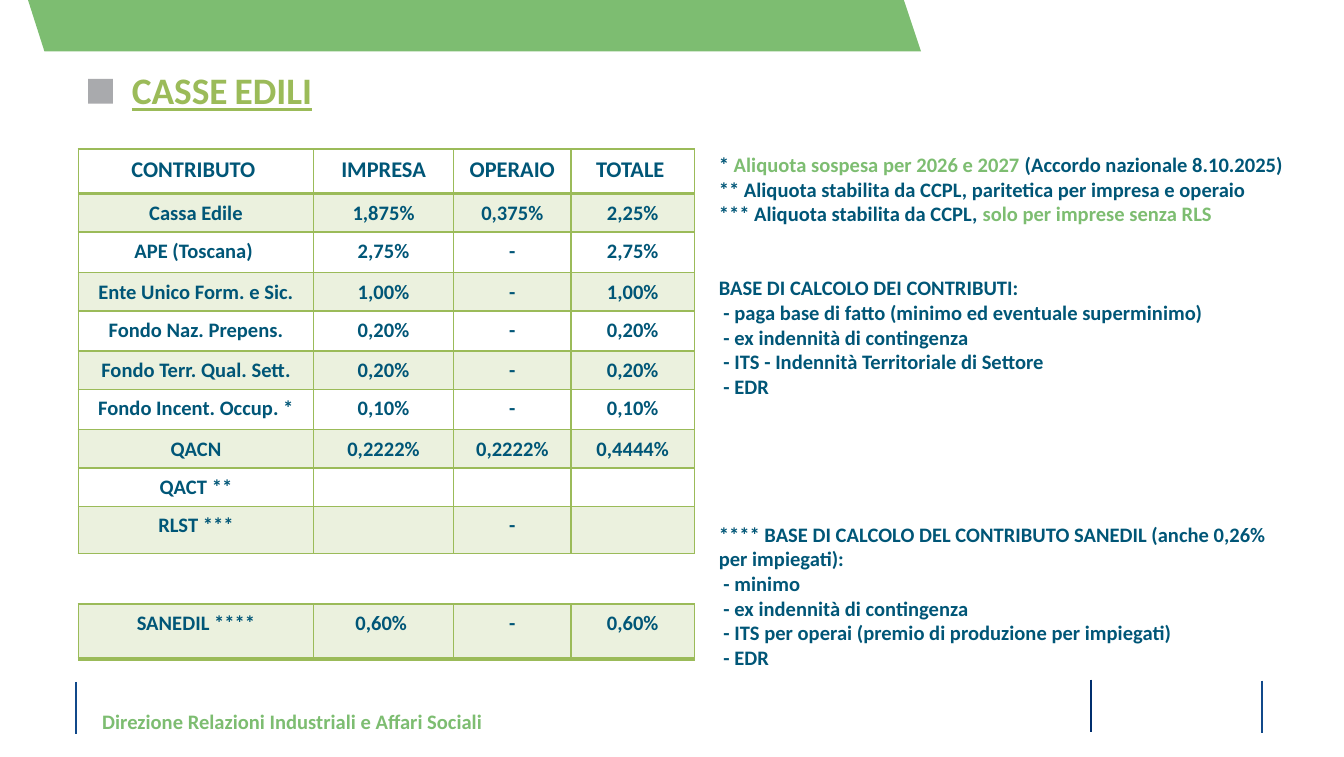
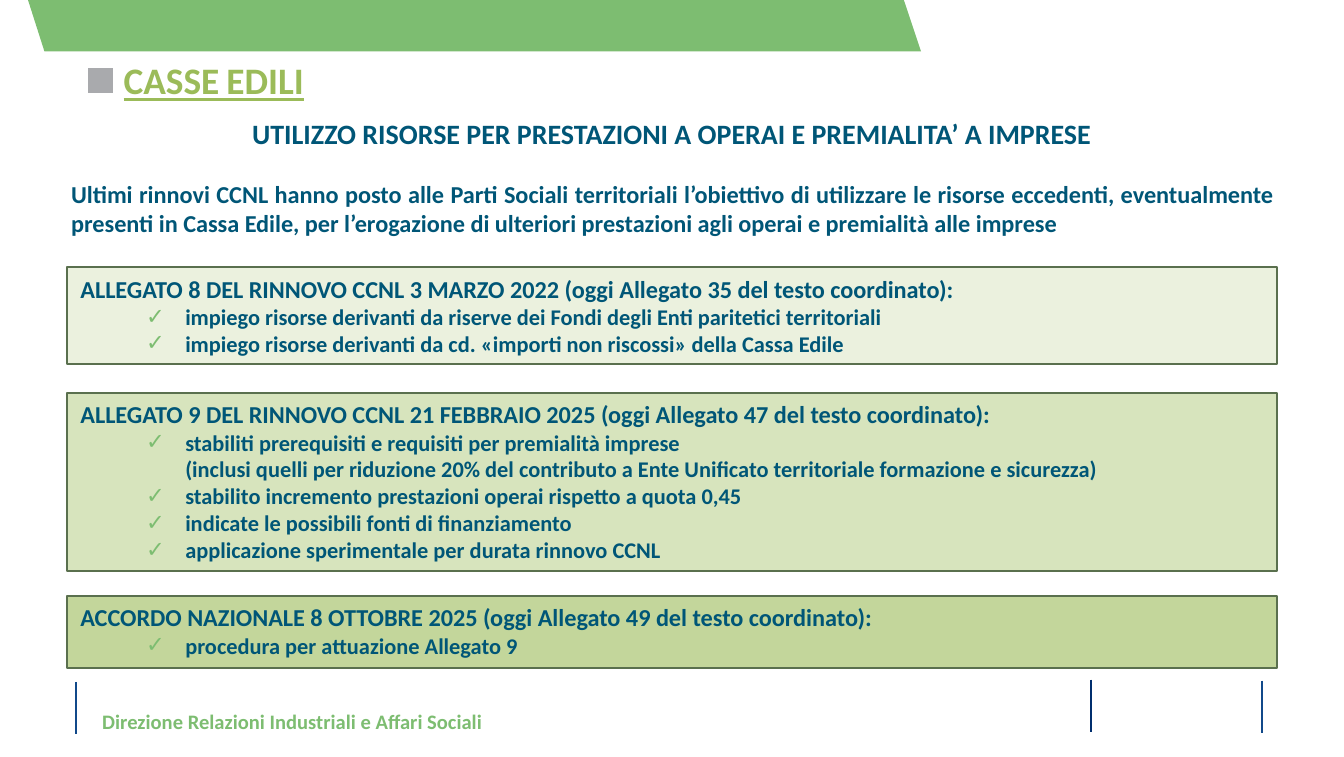
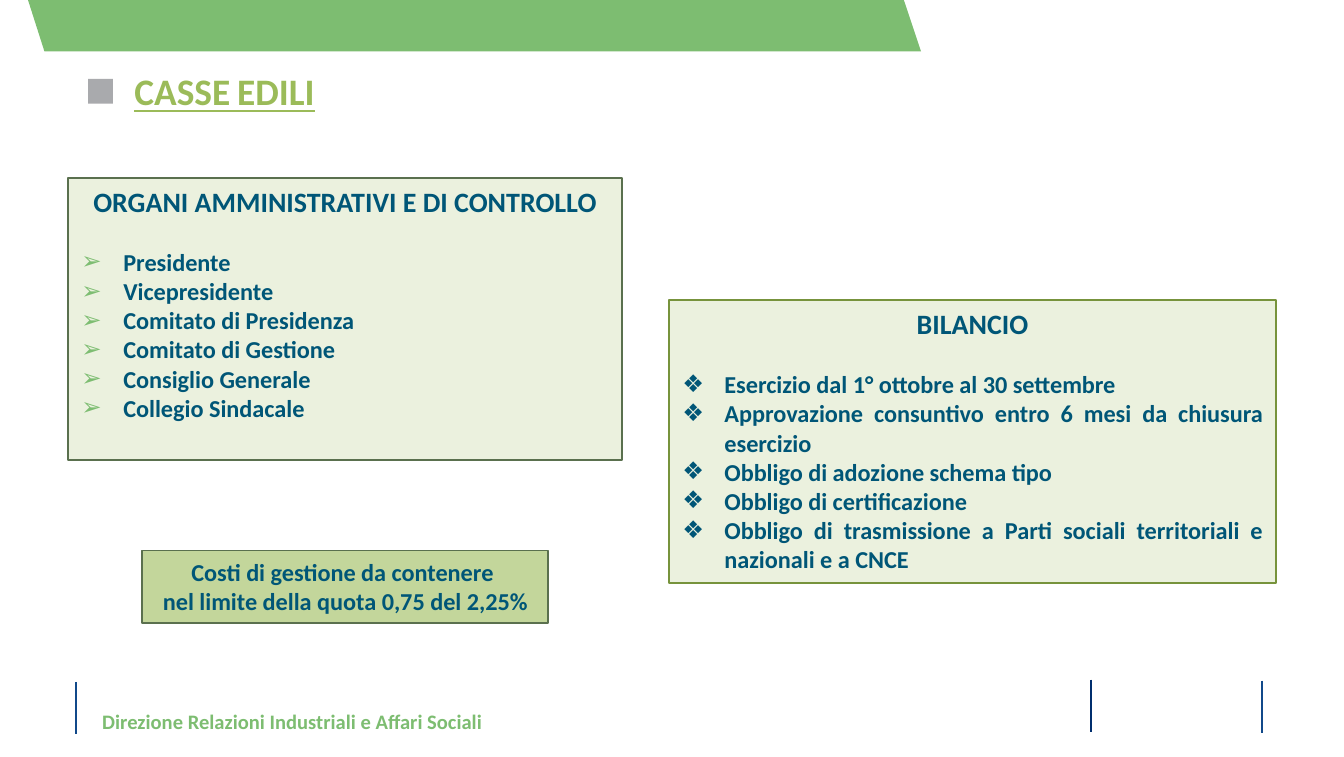
from dataclasses import dataclass
from functools import partial

from lxml import etree
from pptx import Presentation
from pptx.dml.color import RGBColor
from pptx.enum import shapes, text
from pptx.oxml import ns
from pptx.util import Pt

FONT = "Calibri"
GREEN = RGBColor(0x7D, 0xBD, 0x71)
OLIVE = RGBColor(0x9B, 0xBB, 0x59)
MOSS = RGBColor(0x77, 0x93, 0x3C)
EDGE = RGBColor(0x5A, 0x70, 0x4E)
PALE = RGBColor(0xEB, 0xF1, 0xDE)
LIGHT = RGBColor(0xD7, 0xE4, 0xBD)
MID = RGBColor(0xC3, 0xD6, 0x9B)
TEAL = RGBColor(0x00, 0x56, 0x77)
GREY = RGBColor(0xA9, 0xAA, 0xAD)
BLUE = RGBColor(0x11, 0x49, 0x8A)
NAVY = RGBColor(0x00, 0x2E, 0x6E)

LEFT = text.PP_ALIGN.LEFT
MIDDLE = text.PP_ALIGN.CENTER
FULL = text.PP_ALIGN.JUSTIFY

COLS = (126, 75, 63, 66)
ROWS = (23.8, 20.6, 21.7, 20.6, 21.4, 20.6, 21.6, 20.6, 20.6, 25.2)
RATES = (
    ("CONTRIBUTO ", "IMPRESA", "OPERAIO", "TOTALE "),
    ("Cassa Edile", "1,875%", "0,375%", "2,25%"),
    ("APE (Toscana) ", "2,75%", "-", "2,75%"),
    ("Ente Unico Form. e Sic.", "1,00%", "-", "1,00%"),
    ("Fondo Naz. Prepens.", "0,20%", "-", "0,20%"),
    ("Fondo Terr. Qual. Sett.", "0,20%", "-", "0,20%"),
    ("Fondo Incent. Occup. *", "0,10%", "-", "0,10%"),
    ("QACN", "0,2222%", "0,2222%", "0,4444%"),
    ("QACT **", "", "", ""),
    ("RLST ***", "", "-", ""),
)


@dataclass
class Line:
    """A paragraph: plain words, or (words, colour) parts, and its layout."""
    words: object
    size: float = 13
    color: RGBColor = TEAL
    align: int = FULL
    gap: float = 0
    left: float = 0
    hang: float = 0
    mark: str = ""
    tint: RGBColor = TEAL
    title: bool = False


Note = partial(Line, size=11, align=LEFT)
Dash = partial(Note, left=2.5)
Head = partial(Line, size=15, align=MIDDLE)
Plain = partial(Line, size=12, left=56.2)
Check = partial(Plain, hang=21, mark="✓", tint=GREEN)
Arrow = partial(Line, left=22.5, hang=22.5, mark="➢", tint=GREEN)
Gem = partial(Line, left=22.5, hang=22.5, mark="❖")


def paint(el, color):
    """Add a solid fill of the given colour to an XML element."""
    fill = etree.SubElement(el, ns.qn("a:solidFill"))
    etree.SubElement(fill, ns.qn("a:srgbClr"), val=str(color))


def style(para, line):
    """Put one line's words and layout into a paragraph."""
    para.alignment = line.align
    para.space_before = Pt(line.gap)
    props = para._p.get_or_add_pPr()
    props.set("marL", str(Pt(line.left)))
    props.set("indent", str(-Pt(line.hang)))
    if line.mark:
        tint = etree.SubElement(props, ns.qn("a:buClr"))
        etree.SubElement(tint, ns.qn("a:srgbClr"), val=str(line.tint))
        etree.SubElement(props, ns.qn("a:buFont"), typeface=FONT)
        etree.SubElement(props, ns.qn("a:buChar"), char=line.mark)
    font = para.font
    font.name, font.size, font.bold = FONT, Pt(line.size), True
    font.color.rgb = line.color
    if line.title:
        font.underline = True
        props.find(ns.qn("a:defRPr")).set("cap", "small")
    if isinstance(line.words, str):
        if line.words:
            para.add_run().text = line.words
        else:
            etree.SubElement(para._p, ns.qn("a:endParaRPr"), sz=str(int(line.size * 100)))
        return
    for words, color in line.words:
        run = para.add_run()
        run.text = words
        run.font.color.rgb = color


def write(frame, lines):
    """Fill a text frame with lines from the top."""
    frame.word_wrap = True
    frame.vertical_anchor = text.MSO_ANCHOR.TOP
    for num, line in enumerate(lines):
        style(frame.add_paragraph() if num else frame.paragraphs[0], line)


def label(slide, area, lines, inset=True):
    """Add a text box, with or without inner margins."""
    frame = slide.shapes.add_textbox(*map(Pt, area)).text_frame
    if not inset:
        frame.margin_left = frame.margin_right = 0
        frame.margin_top = frame.margin_bottom = 0
    write(frame, lines)


def panel(slide, area, fill, edge=None, lines=()):
    """Add a filled rectangle with an optional outline and text."""
    shape = slide.shapes.add_shape(shapes.MSO_SHAPE.RECTANGLE, *map(Pt, area))
    shape.shadow.inherit = False
    shape.fill.solid()
    shape.fill.fore_color.rgb = fill
    if edge is None:
        shape.line.fill.background()
    else:
        shape.line.color.rgb = edge
        shape.line.width = Pt(1)
    write(shape.text_frame, lines)


def rule(slide, x, top, color):
    """Add one upright footer line."""
    line = slide.shapes.add_connector(
        shapes.MSO_CONNECTOR.STRAIGHT, Pt(x), Pt(top), Pt(x), Pt(top + 28))
    line.line.color.rgb = color
    line.line.width = Pt(1)
    etree.SubElement(line._element.spPr, ns.qn("a:effectLst"))


def band(slide):
    """Add the slanted band at the top."""
    edge = [(Pt(x), Pt(y)) for x, y in ((15, 0), (23.8, 27.5), (493.4, 27.5), (484.2, 0))]
    pen = slide.shapes.build_freeform(*edge[0])
    pen.add_line_segments(edge[1:], close=True)
    shape = pen.convert_to_shape()
    shape.shadow.inherit = False
    shape.fill.solid()
    shape.fill.fore_color.rgb = GREEN
    shape.line.fill.background()


def border(cell, top, base):
    """Draw the four sides of a cell, with given top and base widths."""
    props = cell._tc.get_or_add_tcPr()
    for side, width in (("L", 1), ("R", 1), ("T", top), ("B", base)):
        line = etree.SubElement(props, ns.qn("a:ln" + side), w=str(Pt(width)))
        paint(line, OLIVE)


def grid(slide, top, rows, highs, shade, big=None):
    """Add a table whose first row has a heavy base line."""
    area = (42, top, sum(COLS), sum(highs))
    table = slide.shapes.add_table(len(rows), len(COLS), *map(Pt, area)).table
    table.first_row = table.horz_banding = False
    for col, width in zip(table.columns, COLS):
        col.width = Pt(width)
    for num, (row, high) in enumerate(zip(rows, highs)):
        table.rows[num].height = Pt(high)
        for cell, words in zip(table.rows[num].cells, row):
            border(cell, 2 if num == 1 else 1, 2 if num == 0 else 1)
            if num % 2 == shade:
                cell.fill.solid()
                cell.fill.fore_color.rgb = PALE
            else:
                cell.fill.background()
            size = 12 if num == big else 11
            write(cell.text_frame, [Line(words, size, align=MIDDLE)])


def start(deck, left, top, mark):
    """Add a slide with band, title, square mark and footer."""
    slide = deck.slides.add_slide(deck.slide_layouts[6])
    rule(slide, 40.7, 365.2, BLUE)
    rule(slide, 676.2, 364.5, BLUE)
    rule(slide, 584.3, 364, NAVY)
    title = Line("CASSE EDILI", 20, OLIVE, LEFT, title=True)
    label(slide, (left, top, 611, 24.5), [title], inset=False)
    panel(slide, (47.2, mark, 13.3, 13.3), GREY)
    band(slide)
    foot = Note("Direzione Relazioni Industriali e Affari Sociali", color=GREEN)
    label(slide, (54.8, 379.8, 318, 14), [foot], inset=False)
    return slide


def rates(deck):
    """Build the slide of contribution rates."""
    slide = start(deck, 70.6, 36, 42.2)
    grid(slide, 79.9, RATES, ROWS, shade=1, big=0)
    label(slide, (378, 77.8, 318.2, 300), [
        Note([("* ", TEAL), ("Aliquota sospesa per 2026 e 2027 ", GREEN),
              ("(Accordo nazionale 8.10.2025)", TEAL)]),
        Note("** Aliquota stabilita da CCPL, paritetica per impresa e operaio"),
        Note([("*** Aliquota stabilita da CCPL, ", TEAL),
              ("solo per imprese senza RLS", GREEN)]),
        Note("BASE DI CALCOLO DEI CONTRIBUTI:", gap=26.4),
        Dash("- paga base di fatto (minimo ed eventuale superminimo)"),
        Dash("- ex indennità di contingenza"),
        Dash("- ITS - Indennità Territoriale di Settore"),
        Dash("- EDR"),
        Note("**** BASE DI CALCOLO DEL CONTRIBUTO SANEDIL (anche 0,26% per impiegati):",
             gap=66),
        Dash("- minimo"),
        Dash("- ex indennità di contingenza"),
        Dash("- ITS per operai (premio di produzione per impiegati)"),
        Dash("- EDR"),
    ])
    grid(slide, 323.5, [("SANEDIL ****", "0,60% ", "-", "0,60%")], [29.5], shade=0)


def funds(deck):
    """Build the slide on the use of resources."""
    slide = start(deck, 66.2, 30.7, 36.5)
    label(slide, (31, 59, 658, 72.7), [
        Head("UTILIZZO RISORSE PER PRESTAZIONI A OPERAI E PREMIALITA’ A IMPRESE"),
        Line("Ultimi rinnovi CCNL hanno posto alle Parti Sociali territoriali l’obiettivo "
             "di utilizzare le risorse eccedenti, eventualmente presenti in Cassa Edile, "
             "per l’erogazione di ulteriori prestazioni agli operai e premialità alle imprese",
             gap=15.6),
    ])
    panel(slide, (36, 143.1, 648, 51.8), PALE, EDGE, [
        Line("ALLEGATO 8 DEL RINNOVO CCNL 3 MARZO 2022 (oggi Allegato 35 del testo coordinato):"),
        Check("impiego risorse derivanti da riserve dei Fondi degli Enti paritetici territoriali"),
        Check("impiego risorse derivanti da cd. «importi non riscossi» della Cassa Edile"),
    ])
    panel(slide, (36, 210.4, 648, 95.6), LIGHT, EDGE, [
        Line("ALLEGATO 9 DEL RINNOVO CCNL 21 FEBBRAIO 2025 "
             "(oggi Allegato 47 del testo coordinato): "),
        Check("stabiliti prerequisiti e requisiti per premialità imprese "),
        Plain("(inclusi quelli per riduzione 20% del contributo a Ente Unificato "
              "territoriale formazione e sicurezza)"),
        Check("stabilito incremento prestazioni operai rispetto a quota 0,45"),
        Check("indicate le possibili fonti di finanziamento"),
        Check("applicazione sperimentale per durata rinnovo CCNL"),
    ])
    panel(slide, (36, 319.2, 648, 38.6), MID, EDGE, [
        Line("ACCORDO NAZIONALE 8 OTTOBRE 2025 (oggi Allegato 49 del testo coordinato): "),
        Check("procedura per attuazione Allegato 9"),
    ])


def organs(deck):
    """Build the slide on governing bodies and accounts."""
    slide = start(deck, 72, 36.7, 42.2)
    names = ("Presidente", "Vicepresidente", "Comitato di Presidenza",
             "Comitato di Gestione", "Consiglio Generale", "Collegio Sindacale")
    panel(slide, (36.5, 95.2, 296.8, 151.4), PALE, EDGE, [
        Head("ORGANI AMMINISTRATIVI E DI CONTROLLO"),
        *(Arrow(name, gap=0 if num else 15.6) for num, name in enumerate(names)),
    ])
    duties = ("Esercizio dal 1° ottobre al 30 settembre",
              "Approvazione consuntivo entro 6 mesi da chiusura esercizio",
              "Obbligo di adozione schema tipo ",
              "Obbligo di certificazione",
              "Obbligo di trasmissione a Parti sociali territoriali e nazionali e a CNCE")
    panel(slide, (358.5, 160.7, 325, 151.5), PALE, MOSS, [
        Head("BILANCIO"),
        *(Gem(duty, gap=0 if num else 15.6) for num, duty in enumerate(duties)),
    ])
    panel(slide, (76.2, 294.8, 217.4, 39), MID, EDGE, [
        Line("Costi di gestione da contenere ", align=MIDDLE),
        Line("nel limite della quota 0,75 del 2,25%", align=MIDDLE),
    ])


def main():
    """Build the three slides and save the deck."""
    deck = Presentation()
    deck.slide_width, deck.slide_height = Pt(720), Pt(405.37)
    rates(deck)
    funds(deck)
    organs(deck)
    deck.save("out.pptx")


if __name__ == "__main__":
    main()
